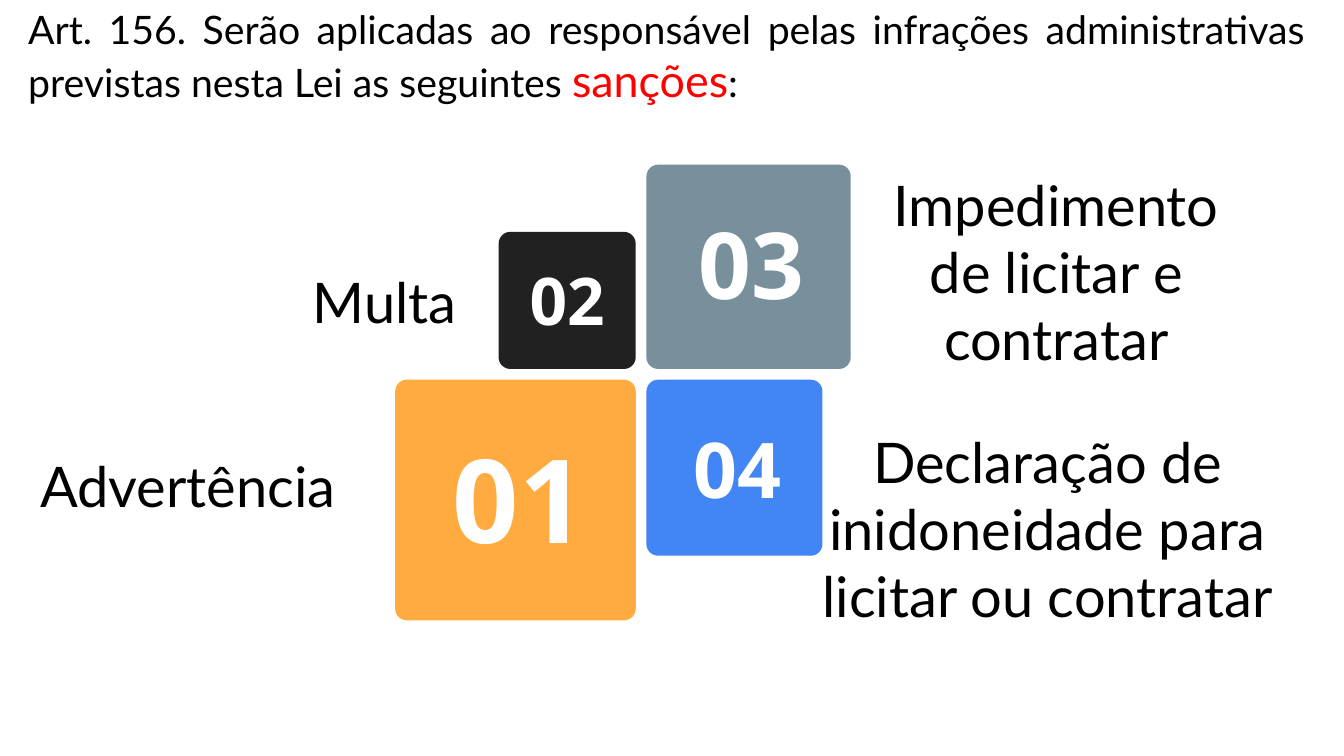
"""Build a slide of four numbered sanctions around a shared corner."""
from pptx import Presentation
from pptx.dml.color import RGBColor
from pptx.enum.shapes import MSO_SHAPE
from pptx.enum.text import MSO_ANCHOR, MSO_AUTO_SIZE, PP_ALIGN
from pptx.util import Inches, Pt

BLACK = RGBColor(0, 0, 0)
WHITE = RGBColor(255, 255, 255)
RED = RGBColor(255, 0, 0)
AMBER = RGBColor(0xFF, 0xAB, 0x40)
DARK = RGBColor(0x21, 0x21, 0x21)
SLATE = RGBColor(0x78, 0x90, 0x9C)
BLUE = RGBColor(0x42, 0x85, 0xF4)

deck = Presentation()
deck.slide_width = Inches(10)
deck.slide_height = deck.slide_width * 9 // 16
CELL = deck.slide_width / 100
HUB_X, HUB_Y = 47.7, 27.85
GAP, ROUND = 0.4, 0.87


def grid(*cells):
    """Turn grid cells into slide lengths."""
    return [round(cell * CELL) for cell in cells]


def style(run, font, size, color, bold=False):
    """Set the look of one run."""
    run.font.name, run.font.size, run.font.bold = font, Pt(size), bold
    run.font.color.rgb = color


slide = deck.slides.add_slide(deck.slide_layouts[5])

title = slide.shapes.title
title.left, title.top, title.width, title.height = grid(1.1, -0.1, 97, 8.6)
frame = title.text_frame
frame.word_wrap = True
frame.auto_size = MSO_AUTO_SIZE.NONE
frame.vertical_anchor = MSO_ANCHOR.TOP
para = frame.paragraphs[0]
para.alignment = PP_ALIGN.JUSTIFY
for text, size, color in [
    ("Art. 156. Serão aplicadas ao responsável pelas infrações "
     "administrativas previstas nesta Lei as seguintes ", 21, BLACK),
    ("sanções", 24, RED),
    (":", 21, BLACK),
]:
    run = para.add_run()
    run.text = text
    style(run, "Lato", size, color)

tiles = [
    ("01", -1, 1, 17.9, AMBER, 62.2, 33.7, 31.8),
    ("02", -1, -1, 10.2, DARK, 35.2, 39.4, 19.3),
    ("03", 1, -1, 15.2, SLATE, 49.5, 52, 15.4),
    ("04", 1, 1, 13.1, BLUE, 41.2, 51.6, 31.4),
]
for text, across, down, side, color, size, text_x, text_y in tiles:
    reach = GAP + side / 2
    left = HUB_X + across * reach - side / 2
    top = HUB_Y + down * reach - side / 2
    tile = slide.shapes.add_shape(
        MSO_SHAPE.ROUNDED_RECTANGLE, *grid(left, top, side, side))
    tile.adjustments[0] = ROUND / side
    tile.shadow.inherit = False
    tile.fill.solid()
    tile.fill.fore_color.rgb = color
    tile.line.fill.background()
    frame = slide.shapes.add_textbox(
        *grid(text_x, text_y, size * 0.16, size * 0.17)).text_frame
    frame.margin_left = frame.margin_right = 0
    frame.margin_top = frame.margin_bottom = 0
    frame.word_wrap = False
    frame.text = text
    style(frame.paragraphs[0].runs[0], "Open Sans", size, WHITE, True)

labels = [
    ("Advertência", PP_ALIGN.LEFT, 2, 33.1, 31.4, 6.1),
    ("Multa", PP_ALIGN.JUSTIFY, 22.3, 19.4, 14, 6.1),
    ("Impedimento de licitar e contratar", PP_ALIGN.CENTER,
     63.3, 12.2, 30.6, 16.2),
    ("Declaração de inidoneidade para licitar ou contratar",
     PP_ALIGN.CENTER, 59, 31.3, 37.9, 21.2),
]
for text, align, *cells in labels:
    frame = slide.shapes.add_textbox(*grid(*cells)).text_frame
    frame.word_wrap = True
    frame.text = text
    frame.paragraphs[0].alignment = align
    style(frame.paragraphs[0].runs[0], "Lato", 30, BLACK)

deck.save("out.pptx")
